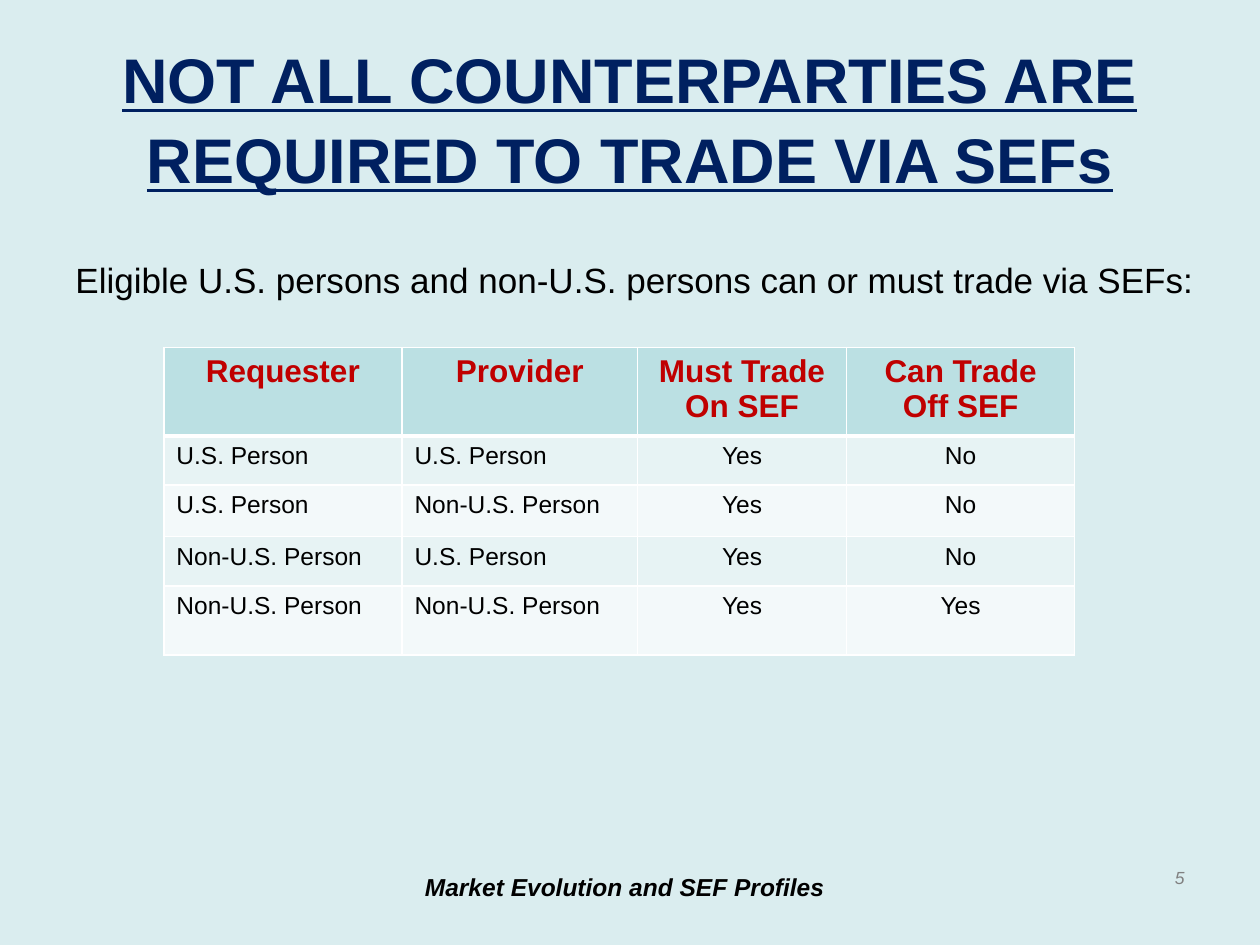
"""Build the slide on which counterparties must trade via SEFs."""
from lxml import etree
from pptx import Presentation
from pptx.dml.color import RGBColor
from pptx.enum import text as t
from pptx.oxml import ns
from pptx.util import Inches, Pt

HUES = {"back": "DAEDEF", "navy": "002060", "red": "C00000", "black": "000000",
        "gray": "808080", "white": "FFFFFF", "head": "BBE0E3",
        "odd": "E7F3F4", "even": "F3F9FA"}
LEFT, MID, RIGHT = t.PP_ALIGN.LEFT, t.PP_ALIGN.CENTER, t.PP_ALIGN.RIGHT


def write(frame, words, hue, align, look):
    frame.text = words
    for para in frame.paragraphs:
        para.alignment = align
        for run in para.runs:
            run.font.name = "Arial"
            run.font.color.rgb = RGBColor.from_string(HUES[hue])
            for name, value in look.items():
                setattr(run.font, name, value)


def edge(cell, side, width):
    line = etree.SubElement(cell._tc.get_or_add_tcPr(), ns.qn(f"a:ln{side}"), w=str(Pt(width)))
    fill = etree.SubElement(line, ns.qn("a:solidFill"))
    etree.SubElement(fill, ns.qn("a:srgbClr"), val=HUES["white"])


deck = Presentation()
deck.slide_width, deck.slide_height = Inches(10), Inches(7.5)
slide = deck.slides.add_slide(deck.slide_layouts[6])
slide.background.fill.solid()
slide.background.fill.fore_color.rgb = RGBColor.from_string(HUES["back"])

texts = [
    ("Eligible U.S. persons and non-U.S. persons can or must trade via SEFs:",
     (0.5, 2, 9.08, 4.7), "black", LEFT, {"size": Pt(20)}),
    ("Market Evolution and SEF Profiles", (2.36, 6.87, 5.2, 0.44), "black", MID,
     {"size": Pt(14), "bold": True, "italic": True}),
    ("5", (7.17, 6.83, 2.33, 0.52), "gray", RIGHT, {"size": Pt(10), "italic": True}),
    ("NOT ALL COUNTERPARTIES ARE REQUIRED TO TRADE VIA SEFs", (0.5, 0.3, 9, 1.25),
     "navy", MID, {"size": Pt(36), "bold": True, "underline": True}),
]
for words, place, hue, align, look in texts:
    frame = slide.shapes.add_textbox(*map(Inches, place)).text_frame
    frame.word_wrap = True
    write(frame, words, hue, align, look)
frame.vertical_anchor = t.MSO_ANCHOR.MIDDLE
frame.paragraphs[0].line_spacing = 1.05

home, away = "U.S. Person", "Non-U.S. Person"
rows = [
    ("Requester", "Provider", "Must Trade\nOn SEF", "Can Trade\nOff SEF"),
    (home, home, "Yes", "No"),
    (home, away, "Yes", "No"),
    (away, home, "Yes", "No"),
    (away, away, "Yes", "Yes"),
]
wide = [1.89, 1.87, 1.66, 1.81]
high = [0.69, 0.39, 0.41, 0.39, 0.55]
place = (1.3, 2.76, sum(wide), sum(high))
table = slide.shapes.add_table(len(rows), len(wide), *map(Inches, place)).table
for col, width in zip(table.columns, wide):
    col.width = Inches(width)
for r, row in enumerate(rows):
    table.rows[r].height = Inches(high[r])
    for c, words in enumerate(row):
        cell = table.cell(r, c)
        if r == 0:
            tint, hue, look = "head", "red", {"size": Pt(18), "bold": True}
        else:
            tint = "odd" if r % 2 else "even"
            hue, look = "black", {"size": Pt(14), "bold": False}
        write(cell.text_frame, words, hue, MID if r == 0 or c > 1 else LEFT, look)
        for side in "LRTB":
            thick = (r, side) in ((0, "B"), (1, "T"))
            edge(cell, side, 3 if thick else 1)
        cell.fill.solid()
        cell.fill.fore_color.rgb = RGBColor.from_string(HUES[tint])

deck.save("out.pptx")
